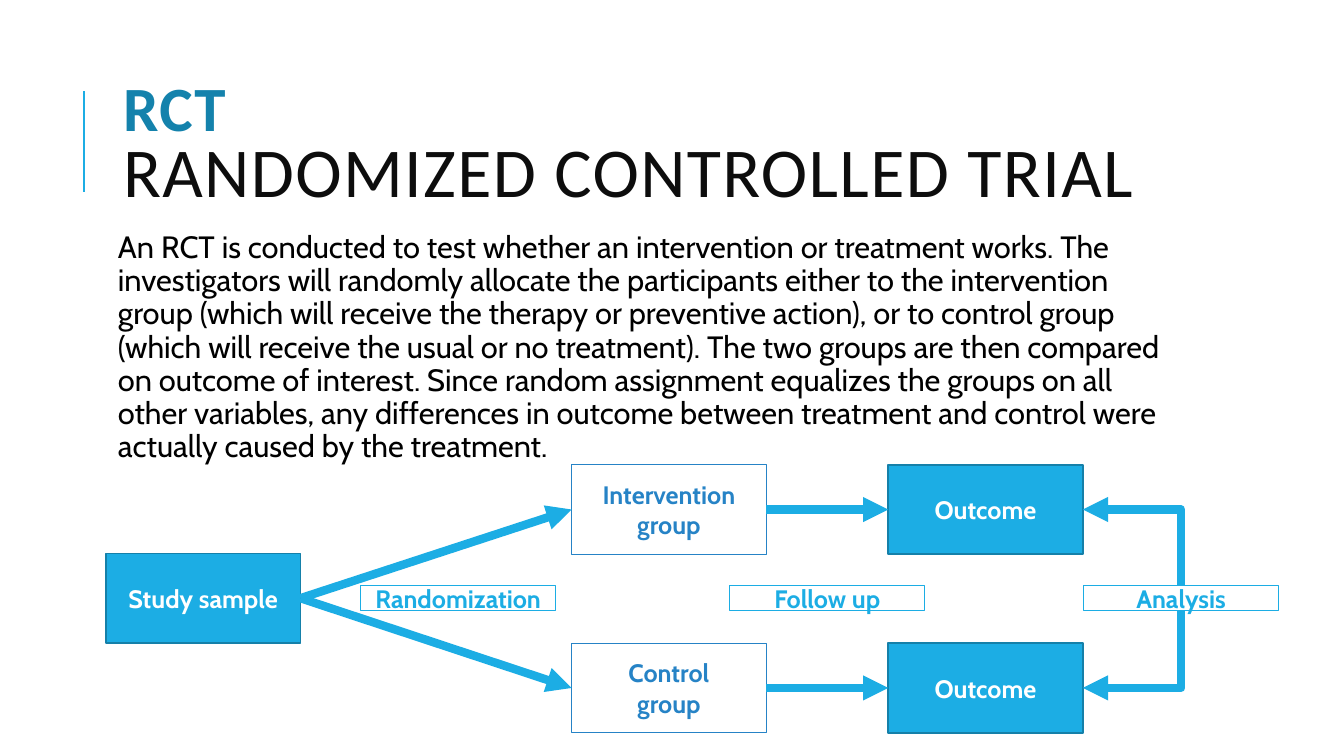
"""Build a slide that explains the randomized controlled trial with a flow diagram."""
from dataclasses import dataclass

from pptx import Presentation
from pptx.dml.color import RGBColor as RGB
from pptx.enum.shapes import MSO_CONNECTOR as CONN, MSO_SHAPE as SHAPE
from pptx.enum.text import MSO_ANCHOR as ANCHOR, MSO_AUTO_SIZE as FIT, PP_ALIGN as ALIGN
from pptx.oxml.ns import qn
from pptx.util import Inches, Pt


@dataclass
class Theme:
    accent: str = "1CADE4"
    edge: str = "1580A9"
    blue: str = "2683C6"
    heading: str = "1482AC"
    ink: str = "0D0D0D"
    black: str = "000000"
    white: str = "FFFFFF"
    title_font: str = "Calibri"
    body_font: str = "Cabin"
    short_size: int = 45
    title_size: int = 50
    body_size: int = 22
    label_size: int = 18


theme = Theme()


def add_run(p, text, font, size, color, bold=False):
    r = p.add_run()
    r.text = text
    r.font.name, r.font.size, r.font.bold = font, Pt(size), bold
    r.font.color.rgb = RGB.from_string(color)
    return r


def add_line(kind, start, end, width):
    line = slide.shapes.add_connector(kind, *[Inches(v) for v in start + end])
    line.line.color.rgb = RGB.from_string(theme.accent)
    line.line.width = Pt(width)
    sp_pr = line._element.spPr
    sp_pr.append(sp_pr.makeelement(qn("a:effectLst"), {}))
    return line


prs = Presentation()
prs.slide_width, prs.slide_height = Inches(13.33), Inches(7.5)
slide = prs.slides.add_slide(prs.slide_layouts[1])
title, body = slide.placeholders

add_line(CONN.STRAIGHT, (0.83, 1.9), (0.83, 0.9), 1.5)

for sp, top, height, anchor in [(title, 0.64, 1.64, ANCHOR.MIDDLE), (body, 2.25, 4.4, ANCHOR.TOP)]:
    sp.left, sp.top, sp.width, sp.height = [Inches(v) for v in (1.12, top, 10.63, height)]
    tf = sp.text_frame
    tf.word_wrap, tf.auto_size, tf.vertical_anchor = True, FIT.NONE, anchor
    tf.paragraphs[0].alignment = ALIGN.LEFT

p = title.text_frame.paragraphs[0]
p.line_spacing = 0.8
short = add_run(p, "RCT", theme.title_font, theme.short_size, theme.heading, True)
p.add_line_break()
full = add_run(p, "RANDOMIZED CONTROLLED TRIAL", theme.title_font, theme.title_size, theme.ink)
for r in (short, full):
    r.font._element.set("spc", "100")

tf = body.text_frame
tf.margin_left = tf.margin_right = tf.margin_top = tf.margin_bottom = Inches(0.05)
p = tf.paragraphs[0]
p.line_spacing, p.space_before, p.space_after = 0.9, Pt(12), Pt(2)
p_pr = p._p.get_or_add_pPr()
p_pr.set("marL", "0")
p_pr.set("indent", "0")
p_pr.append(p_pr.makeelement(qn("a:buNone"), {}))
add_run(
    p,
    "An RCT is conducted to test whether an intervention or treatment works. "
    "The investigators will randomly allocate the participants either to the intervention group "
    "(which will receive the therapy or preventive action), or to control group "
    "(which will receive the usual or no treatment). "
    "The two groups are then compared on outcome of interest. "
    "Since random assignment equalizes the groups on all other variables, any differences in outcome "
    "between treatment and control were actually caused by the treatment.",
    theme.body_font, theme.body_size, theme.black,
)

BOX_W, BOX_H, LABEL_H = 1.93, 0.89, 0.25
TOP_ROW, MID_ROW, LOW_ROW, LABEL_ROW = 4.61, 5.49, 6.38, 5.81
SOLID = (theme.accent, theme.edge, 1.25, theme.white, BOX_H)
GROUP = (None, theme.blue, 0.75, theme.blue, BOX_H)
LABEL = (None, theme.accent, 0.75, theme.accent, LABEL_H)
boxes = {}
for name, lines, left, top, (fill, edge, weight, color, height) in [
    ("sample", ["Study sample"], 1.05, MID_ROW, SOLID),
    ("intervention", ["Intervention", "group"], 5.67, TOP_ROW, GROUP),
    ("control", ["Control", "group"], 5.67, LOW_ROW, GROUP),
    ("top outcome", ["Outcome"], 8.81, TOP_ROW, SOLID),
    ("low outcome", ["Outcome"], 8.81, LOW_ROW, SOLID),
    ("randomization", ["Randomization"], 3.58, LABEL_ROW, LABEL),
    ("follow up", ["Follow up"], 7.24, LABEL_ROW, LABEL),
    ("analysis", ["Analysis"], 10.75, LABEL_ROW, LABEL),
]:
    sp = slide.shapes.add_shape(SHAPE.RECTANGLE, *[Inches(v) for v in (left, top, BOX_W, height)])
    sp.shadow.inherit = False
    if fill:
        sp.fill.solid()
        sp.fill.fore_color.rgb = RGB.from_string(fill)
    else:
        sp.fill.background()
    sp.line.color.rgb = RGB.from_string(edge)
    sp.line.width = Pt(weight)
    tf = sp.text_frame
    tf.word_wrap, tf.vertical_anchor = True, ANCHOR.MIDDLE
    p = tf.paragraphs[0]
    p.alignment = ALIGN.CENTER
    for i, text in enumerate(lines):
        if i:
            p.add_line_break()
        add_run(p, text, theme.body_font, theme.label_size, color, True)
    boxes[name] = sp

for kind, start, start_side, end, end_side, arrow in [
    (CONN.STRAIGHT, "sample", 3, "intervention", 1, "tailEnd"),
    (CONN.STRAIGHT, "sample", 3, "control", 1, "tailEnd"),
    (CONN.STRAIGHT, "intervention", 3, "top outcome", 1, "tailEnd"),
    (CONN.STRAIGHT, "control", 3, "low outcome", 1, "tailEnd"),
    (CONN.ELBOW, "top outcome", 3, "analysis", 0, "headEnd"),
    (CONN.ELBOW, "low outcome", 3, "analysis", 2, "headEnd"),
]:
    line = add_line(kind, (0, 0), (1, 1), 6)
    line.begin_connect(boxes[start], start_side)
    line.end_connect(boxes[end], end_side)
    if kind == CONN.ELBOW:
        line._element.spPr.find(qn("a:prstGeom")).set("prst", "bentConnector2")
    ln = line.line._get_or_add_ln()
    ln.append(ln.makeelement(qn("a:" + arrow), {"type": "triangle"}))

prs.save("out.pptx")
